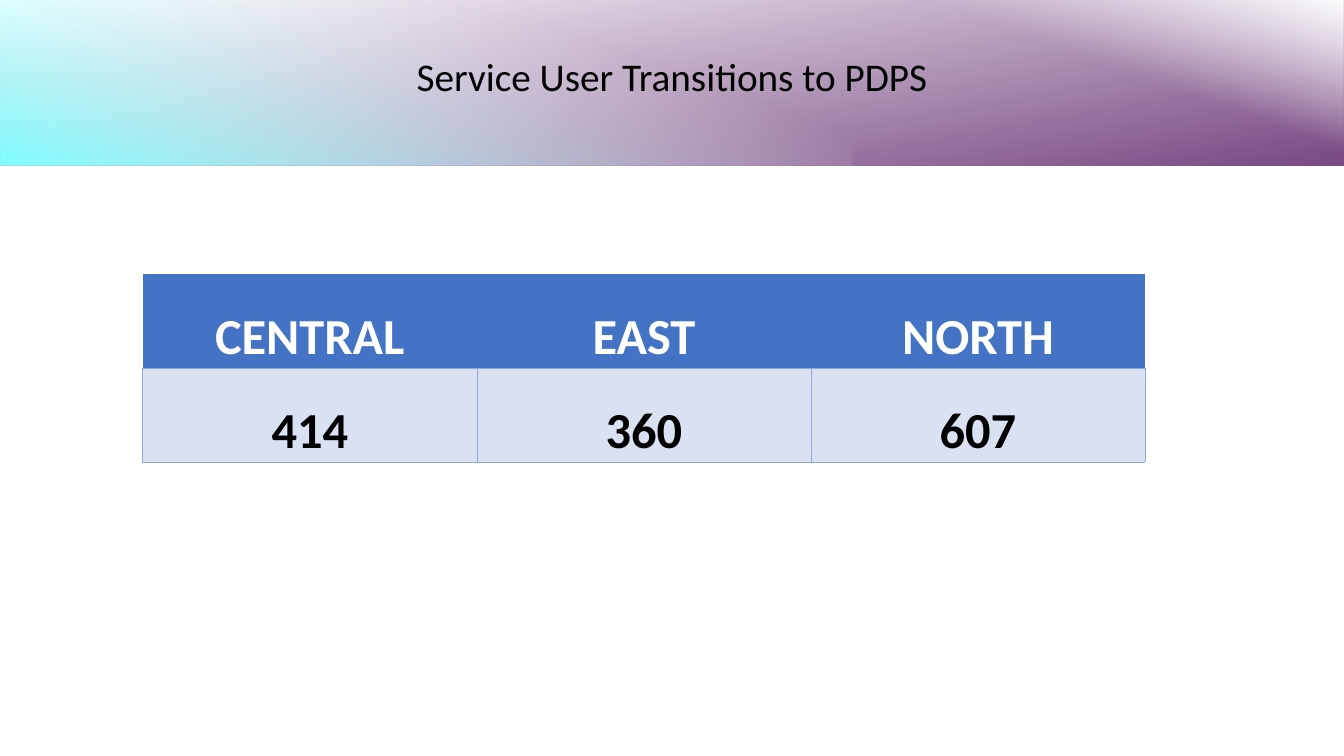
from lxml.etree import SubElement
from pptx import Presentation
from pptx.dml.color import RGBColor
from pptx.enum.shapes import MSO_SHAPE
from pptx.enum.text import MSO_ANCHOR, MSO_AUTO_SIZE, PP_ALIGN
from pptx.oxml import parse_xml
from pptx.oxml.ns import nsdecls, qn
from pptx.util import Pt

WHITE = RGBColor(0xFF, 0xFF, 0xFF)
BLACK = RGBColor(0x00, 0x00, 0x00)
OFF_WHITE = RGBColor(0xFE, 0xFF, 0xFF)
PURPLE = RGBColor(0x79, 0x49, 0x83)
CYAN = RGBColor(0x7F, 0xFF, 0xFF)
HEADER_BLUE = RGBColor(0x44, 0x72, 0xC4)
PALE_BLUE = RGBColor(0xD9, 0xE1, 0xF2)
BORDER_BLUE = RGBColor(0x8E, 0xA9, 0xDB)
FONT = "Calibri"
NO_STYLE = "{2D5ABB26-0587-4C30-8999-92F81FD0307C}"

REGIONS = [("CENTRAL", "414"), ("EAST", "360"), ("NORTH", "607")]


def add_run(paragraph, text, size, color, bold=False):
    paragraph.alignment = PP_ALIGN.CENTER
    run = paragraph.add_run()
    run.text = text
    run.font.name = FONT
    run.font.size = Pt(size)
    run.font.bold = bold
    run.font.color.rgb = color


def set_gradient(shape, stops, angle):
    gradient = parse_xml(f'<a:gradFill {nsdecls("a")} rotWithShape="1"/>')
    stop_list = SubElement(gradient, qn("a:gsLst"))
    for position, color, opacity in stops:
        stop = SubElement(stop_list, qn("a:gs"), pos=str(position * 1000))
        color_element = SubElement(stop, qn("a:srgbClr"), val=str(color))
        if opacity < 100:
            SubElement(color_element, qn("a:alpha"), val=str(opacity * 1000))
    SubElement(gradient, qn("a:lin"), ang=str(angle * 60000), scaled="0")
    shape.fill.background()
    properties = shape._element.spPr
    properties.replace(properties.find(qn("a:noFill")), gradient)


def add_turned_panel(slide, left, top, width, height, rotation, stops, angle):
    shape = slide.shapes.add_shape(
        MSO_SHAPE.RECTANGLE,
        Pt(left + (width - height) / 2), Pt(top + (height - width) / 2),
        Pt(height), Pt(width))
    shape.rotation = rotation
    shape.shadow.inherit = False
    shape.line.fill.background()
    set_gradient(shape, stops, angle)


def add_banner(slide, left, top, width, height):
    right_width, left_width = 399, 608
    add_turned_panel(slide, left, top, width, height, 270,
                     [(0, OFF_WHITE, 100), (100, PURPLE, 100)], 170)
    add_turned_panel(slide, left + width - right_width, top, right_width, height, 270,
                     [(59, OFF_WHITE, 0), (100, OFF_WHITE, 100)], 20)
    add_turned_panel(slide, left, top, left_width, height, 90,
                     [(29, OFF_WHITE, 0), (100, CYAN, 100)], 20)


def add_title(slide, left, top, width, height):
    box = slide.shapes.add_textbox(Pt(left), Pt(top), Pt(width), Pt(height))
    frame = box.text_frame
    frame.word_wrap = True
    frame.auto_size = MSO_AUTO_SIZE.SHAPE_TO_FIT_TEXT
    add_run(frame.paragraphs[0], "Service User Transitions to PDPS", 28, BLACK)


def set_borders(cell, color, width):
    properties = cell._tc.get_or_add_tcPr()
    for index, side in enumerate(("lnL", "lnR", "lnT", "lnB")):
        properties.insert(index, parse_xml(
            f'<a:{side} {nsdecls("a")} w="{Pt(width)}"><a:solidFill>'
            f'<a:srgbClr val="{color}"/></a:solidFill></a:{side}>'))


def fill_cell(cell, text, fill, color):
    cell.margin_left = cell.margin_right = cell.margin_top = cell.margin_bottom = 0
    cell.vertical_anchor = MSO_ANCHOR.BOTTOM
    cell.fill.solid()
    cell.fill.fore_color.rgb = fill
    add_run(cell.text_frame.paragraphs[0], text, 36, color, bold=True)


def add_region_table(slide, left, top, width, height):
    frame = slide.shapes.add_table(2, len(REGIONS), Pt(left), Pt(top), Pt(width), Pt(height))
    table = frame.table
    table._tbl.tblPr.find(qn("a:tableStyleId")).text = NO_STYLE
    table.horz_banding = False
    for column, (region, count) in enumerate(REGIONS):
        fill_cell(table.cell(0, column), region, HEADER_BLUE, WHITE)
        fill_cell(table.cell(1, column), count, PALE_BLUE, BLACK)
        set_borders(table.cell(1, column), BORDER_BLUE, 0.5)


def main():
    presentation = Presentation()
    presentation.slide_width = Pt(960)
    presentation.slide_height = Pt(540)
    slide = presentation.slides.add_slide(presentation.slide_layouts[6])
    add_banner(slide, 0, -1.5, 960, 119.5)
    add_title(slide, 148, 34, 664, 41)
    add_region_table(slide, 102, 196, 716, 134)
    presentation.save("out.pptx")


if __name__ == "__main__":
    main()
